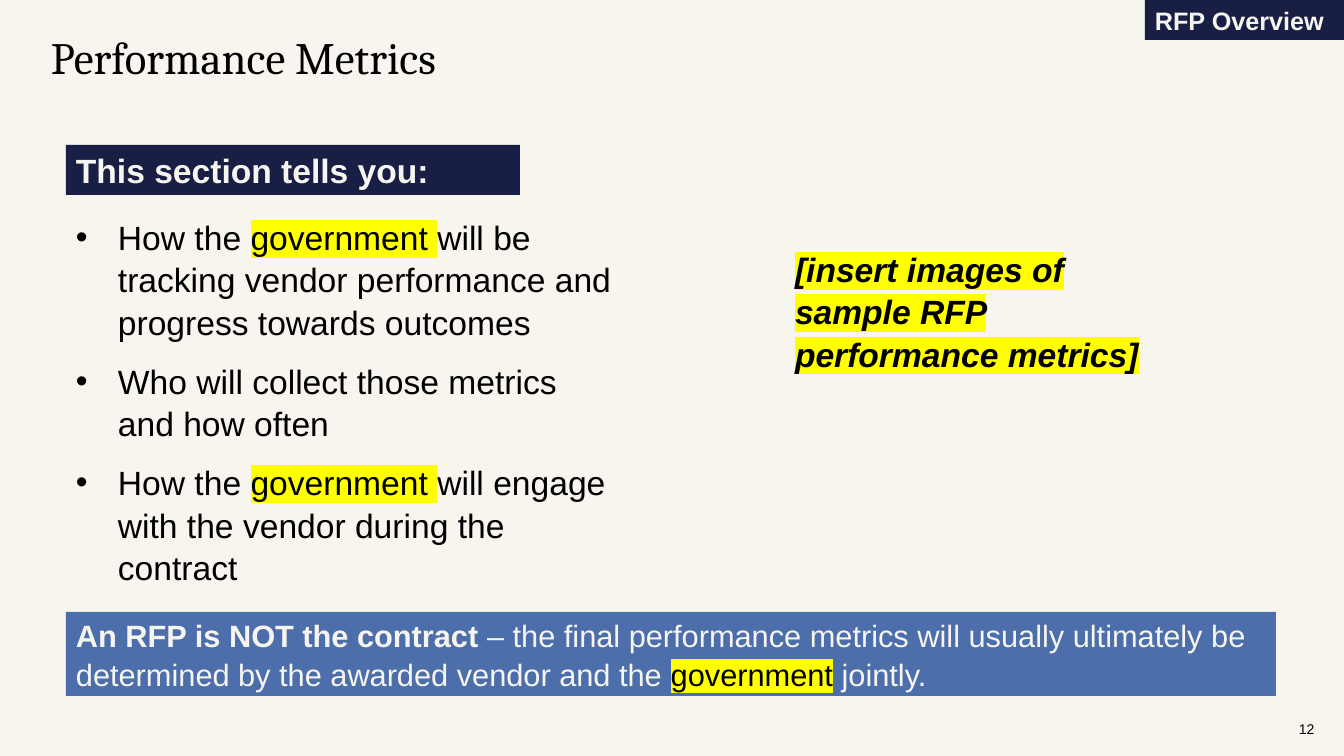
from pptx import Presentation
from pptx.dml.color import RGBColor
from pptx.enum.shapes import MSO_SHAPE as SHAPE
from pptx.enum.text import MSO_ANCHOR as ANCHOR, PP_ALIGN as ALIGN
from pptx.oxml.ns import qn
from pptx.util import Pt
from lxml.etree import SubElement

PX = 914400 / 100.8
CREAM, PAPER, NAVY, BLUE = "F8F5EE", "F7F5EF", "181E44", "4C6EAB"
BLACK, YELLOW = "000000", "FFFF00"
LINE_SPACING = 1.05


def px(length):
    return round(length * PX)


def color(value):
    return RGBColor.from_string(value)


def add_run(paragraph, text, size, ink, font="Arial", bold=False, italic=False, mark=None):
    run = paragraph.add_run()
    run.text = text
    run.font.size, run.font.name = Pt(size), font
    run.font.bold, run.font.italic = bold, italic
    run.font.color.rgb = color(ink)
    if mark:
        props = run.font._element
        highlight = SubElement(props, qn("a:highlight"))
        SubElement(highlight, qn("a:srgbClr")).set("val", mark)
        props.find(qn("a:latin")).addprevious(highlight)


def text_area(slide, box, fill=None, anchor=ANCHOR.TOP):
    """Place a text box, or a filled bar when a fill is given."""
    place = [px(length) for length in box]
    if fill:
        area = slide.shapes.add_shape(SHAPE.RECTANGLE, *place)
        area.shadow.inherit = False
        area.fill.solid()
        area.fill.fore_color.rgb = color(fill)
        area.line.fill.background()
    else:
        area = slide.shapes.add_textbox(*place)
    frame = area.text_frame
    frame.word_wrap = True
    frame.vertical_anchor = anchor
    frame.margin_left = frame.margin_right = px(10)
    frame.margin_top = frame.margin_bottom = px(5)
    frame.paragraphs[0].alignment = ALIGN.LEFT
    return frame


def add_title(slide, box, text):
    title = text_area(slide, box, anchor=ANCHOR.BOTTOM)
    title.margin_top = 0
    add_run(title.paragraphs[0], text, 32, BLACK, font="Cambria")


def add_label(slide, box, text, size):
    label = text_area(slide, box, NAVY, ANCHOR.MIDDLE)
    add_run(label.paragraphs[0], text, size, PAPER, bold=True)


def add_bullets(slide, box, items):
    bullets = text_area(slide, box)
    for index, parts in enumerate(items):
        item = bullets.add_paragraph() if index else bullets.paragraphs[0]
        props = item._p.get_or_add_pPr()
        props.set("marL", str(px(42)))
        props.set("indent", str(px(-42)))
        SubElement(props, qn("a:buFont")).set("typeface", "Arial")
        SubElement(props, qn("a:buChar")).set("char", "•")
        item.line_spacing = LINE_SPACING
        item.space_after = Pt(12)
        for text, mark in parts:
            add_run(item, text, 24, BLACK, mark=mark)


def add_sample_note(slide, box, text):
    note = text_area(slide, box).paragraphs[0]
    note.line_spacing = LINE_SPACING
    add_run(note, text, 24, BLACK, bold=True, italic=True, mark=YELLOW)


def add_callout(slide, box, lead, body, marked, ending):
    callout = text_area(slide, box, BLUE, ANCHOR.MIDDLE).paragraphs[0]
    callout.line_spacing = LINE_SPACING
    add_run(callout, lead, 22, PAPER, bold=True)
    add_run(callout, body, 22, PAPER)
    add_run(callout, marked, 22, BLACK, mark=YELLOW)
    add_run(callout, ending, 22, PAPER)


def add_page_number(slide, box, number):
    page = text_area(slide, box, anchor=ANCHOR.MIDDLE)
    add_run(page.paragraphs[0], number, 10, BLACK)


def build_metrics_slide(deck):
    slide = deck.slides.add_slide(deck.slide_layouts[6])
    slide.background.fill.solid()
    slide.background.fill.fore_color.rgb = color(CREAM)

    # Heading and section tag
    add_title(slide, (41, 29, 1210, 59), "Performance Metrics")
    add_label(slide, (1145, 0, 199, 40), "RFP Overview", 18)

    # Left column
    add_label(slide, (66, 145, 454, 50), "This section tells you:", 24)
    government = ("government ", YELLOW)
    add_bullets(slide, (66, 210, 556, 370), [
        [("How the ", None), government,
         ("will be tracking vendor performance and progress towards outcomes", None)],
        [("Who will collect those metrics and how often", None)],
        [("How the ", None), government,
         ("will engage with the vendor during the contract", None)],
    ])

    # Right column
    add_sample_note(slide, (785, 242, 385, 132),
                    "[insert images of sample RFP performance metrics]")

    # Bottom band
    add_callout(slide, (66, 612, 1210, 84), "An RFP is NOT the contract ",
                "– the final performance metrics will usually ultimately be "
                "determined by the awarded vendor and the ",
                "government", " jointly.")
    add_page_number(slide, (1289, 709, 55, 40), "12")


def main():
    deck = Presentation()
    deck.slide_width, deck.slide_height = px(1344), px(756)
    build_metrics_slide(deck)
    deck.save("out.pptx")


if __name__ == "__main__":
    main()
